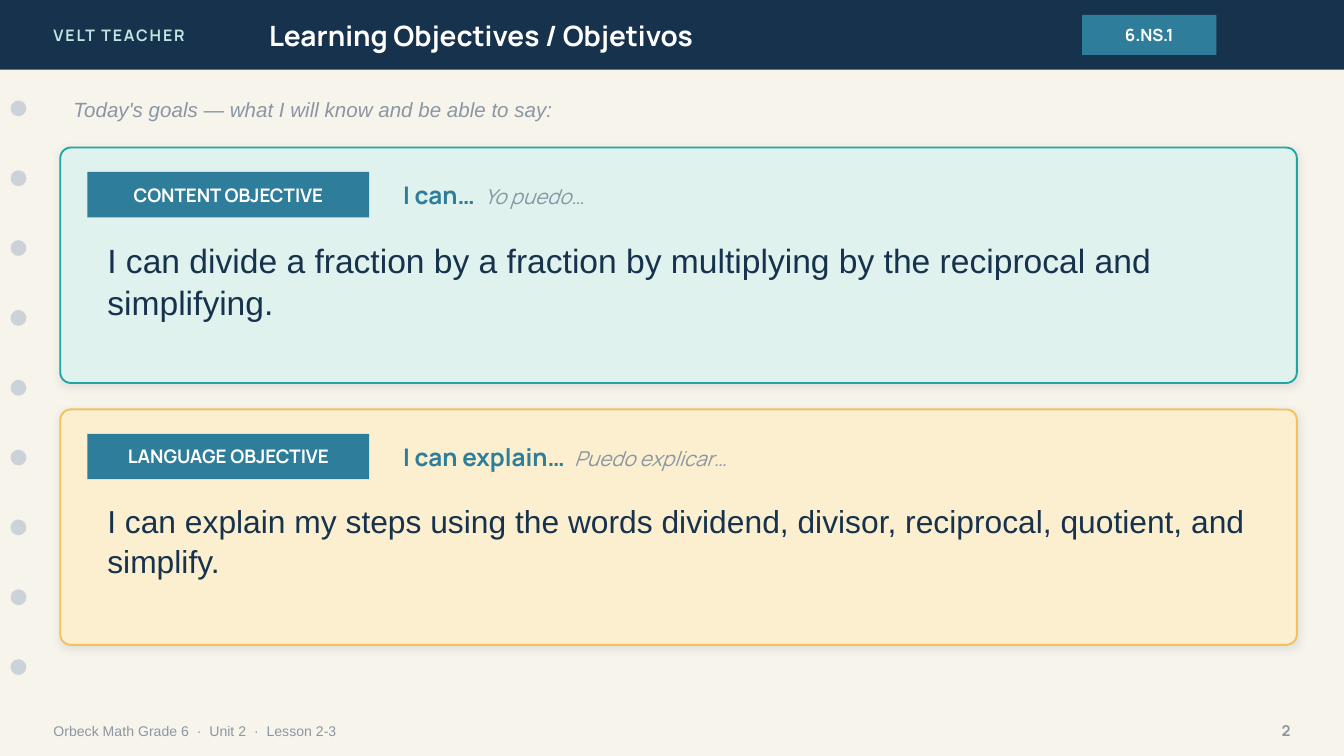
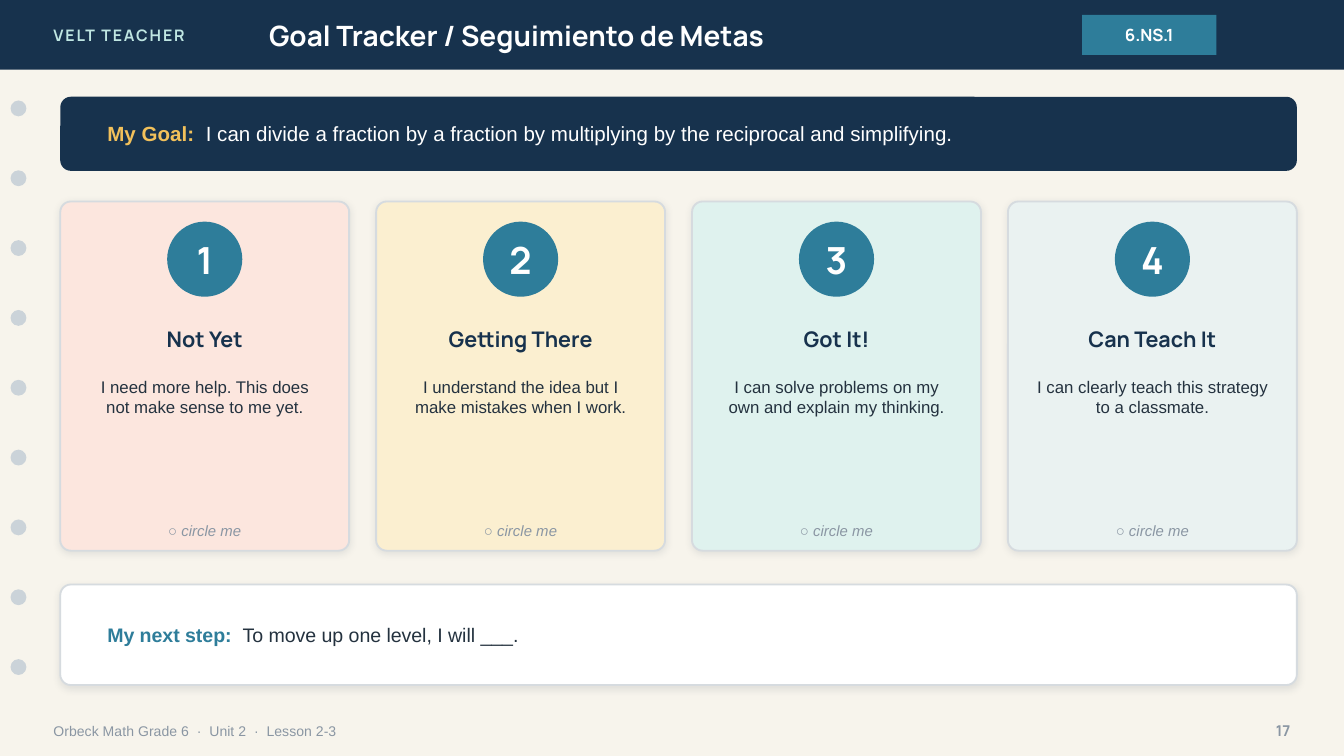
"""Build the learning objectives and goal tracker slides of a lesson deck."""
from lxml.etree import SubElement
from pptx import Presentation
from pptx.dml.color import RGBColor
from pptx.enum.shapes import MSO_SHAPE
from pptx.enum.text import MSO_ANCHOR, MSO_AUTO_SIZE, PP_ALIGN
from pptx.oxml.ns import qn
from pptx.util import Cm, Pt

NAVY, TEAL, GOLD, WHITE = "17324D", "2E7D9A", "F2C15B", "FFFFFF"
CREAM, MINT, BUTTER, BLUSH, MIST = "F7F4EC", "DFF2EE", "FBEFD0", "FCE6DE", "EAF2F1"
INK, GREY, DOT, BORDER = "24323F", "8A96A3", "CBD3D9", "D6DBDF"
HEADING, BODY = "Manrope", "Arial"
LEFT, CONTENT_WIDTH = 1.14, 23.37
TEXT_LEFT, TEXT_WIDTH = 1.78, 22.1
BAND_HEIGHT = 1.32
CORNER_RADIUS = 0.2


def add_box(slide, left, top, width, height, kind=None, fill=None, line=None):
    """Add a text box, or a filled shape; an outlined shape also gets a soft shadow."""
    place = Cm(left), Cm(top), Cm(width), Cm(height)
    if kind is None:
        return slide.shapes.add_textbox(*place)
    shape = slide.shapes.add_shape(kind, *place)
    shape.shadow.inherit = False
    shape.fill.solid()
    shape.fill.fore_color.rgb = RGBColor.from_string(fill)
    if kind == MSO_SHAPE.ROUNDED_RECTANGLE:
        shape.adjustments[0] = CORNER_RADIUS / min(width, height)
    if line is None:
        shape.line.fill.background()
        return shape
    shape.line.color.rgb = RGBColor.from_string(line)
    shape.line.width = Pt(1)
    effects = shape.element.spPr.find(qn("a:effectLst"))
    shadow = SubElement(effects, qn("a:outerShdw"), blurRad=str(Pt(4)), dist=str(Pt(1)),
                        dir="5400000", algn="bl", rotWithShape="0")
    color = SubElement(shadow, qn("a:srgbClr"), val="1C2E42")
    SubElement(color, qn("a:alpha"), val="10000")
    return shape


def write(shape, text, size, color, font=BODY, bold=False, italic=False, align=PP_ALIGN.LEFT,
          anchor=MSO_ANCHOR.MIDDLE, line_spacing=None, tracking=None):
    """Append a formatted run to the first paragraph of a shape."""
    frame = shape.text_frame
    frame.word_wrap = True
    frame.auto_size = MSO_AUTO_SIZE.NONE
    frame.vertical_anchor = anchor
    paragraph = frame.paragraphs[0]
    paragraph.alignment = align
    paragraph.line_spacing = line_spacing
    run = paragraph.add_run()
    run.text = text
    run.font.name = font
    run.font.size = Pt(size)
    run.font.bold = bold
    run.font.italic = italic
    run.font.color.rgb = RGBColor.from_string(color)
    if tracking:
        run.font._element.set("spc", str(tracking))


presentation = Presentation()
presentation.slide_width = Cm(25.4)
presentation.slide_height = Cm(14.29)

slides = []
for title_text, page in [("Learning Objectives / Objetivos", "2"),
                         ("Goal Tracker / Seguimiento de Metas", "17")]:
    slide = presentation.slides.add_slide(presentation.slide_layouts[5])
    slides.append(slide)
    slide.background.fill.solid()
    slide.background.fill.fore_color.rgb = RGBColor.from_string(CREAM)

    title = slide.shapes.title
    title.left, title.top, title.width, title.height = Cm(4.83), Cm(0), Cm(14.22), Cm(BAND_HEIGHT)
    write(title, title_text, 15, WHITE, font=HEADING, bold=True)
    band = add_box(slide, 0, 0, 25.4, BAND_HEIGHT, MSO_SHAPE.RECTANGLE, NAVY)
    title.element.addprevious(band.element)

    brand = add_box(slide, 0.76, 0, 6.1, BAND_HEIGHT)
    write(brand, "VELT TEACHER", 8.5, "BFE6E2", font=HEADING, bold=True, tracking=100)
    standard = add_box(slide, 20.45, 0.28, 2.54, 0.76, MSO_SHAPE.RECTANGLE, TEAL)
    write(standard, "6.NS.1", 9, WHITE, font=HEADING, bold=True, align=PP_ALIGN.CENTER)

    for index in range(9):
        add_box(slide, 0.2, 1.9 + index * BAND_HEIGHT, 0.3, 0.3, MSO_SHAPE.OVAL, DOT)

    footer = add_box(slide, 0.76, 13.46, 17.78, 0.71)
    write(footer, "Orbeck Math Grade 6  ·  Unit 2  ·  Lesson 2-3", 7.5, GREY)
    page_number = add_box(slide, 23.37, 13.46, 1.27, 0.71)
    write(page_number, page, 8, GREY, font=HEADING, bold=True, align=PP_ALIGN.RIGHT)

objectives_slide, tracker_slide = slides

intro = add_box(objectives_slide, LEFT, 1.68, CONTENT_WIDTH, 0.76)
write(intro, "Today's goals — what I will know and be able to say:", 11, GREY, italic=True)

objectives = [
    ("CONTENT OBJECTIVE", "I can…  ", "Yo puedo…", MINT, "1FA6A2", 18,
     "I can divide a fraction by a fraction by multiplying by the reciprocal and simplifying."),
    ("LANGUAGE OBJECTIVE", "I can explain…  ", "Puedo explicar…", BUTTER, GOLD, 17,
     "I can explain my steps using the words dividend, divisor, reciprocal, quotient, "
     "and simplify."),
]
for index, (label, stem, translation, fill, line, size, statement) in enumerate(objectives):
    top = 2.79 + index * 4.95
    add_box(objectives_slide, LEFT, top, CONTENT_WIDTH, 4.45,
            MSO_SHAPE.ROUNDED_RECTANGLE, fill, line)
    tag = add_box(objectives_slide, 1.65, top + 0.46, 5.33, 0.86, MSO_SHAPE.RECTANGLE, TEAL)
    write(tag, label, 10, WHITE, font=HEADING, bold=True, align=PP_ALIGN.CENTER)
    starter = add_box(objectives_slide, 7.37, top + 0.46, 16.76, 0.86)
    write(starter, stem, 13, TEAL, font=HEADING, bold=True)
    write(starter, translation, 11, GREY, font=HEADING, italic=True)
    objective = add_box(objectives_slide, TEXT_LEFT, top + 1.58, TEXT_WIDTH, 2.54)
    write(objective, statement, size, NAVY, anchor=MSO_ANCHOR.TOP, line_spacing=1.05)

add_box(tracker_slide, LEFT, 1.83, CONTENT_WIDTH, 1.4, MSO_SHAPE.ROUNDED_RECTANGLE, NAVY)
goal = add_box(tracker_slide, TEXT_LEFT, 1.83, TEXT_WIDTH, 1.4)
write(goal, "My Goal:  ", 11, GOLD, bold=True)
write(goal, objectives[0][-1], 11, WHITE)

levels = [
    ("Not Yet", "I need more help. This does not make sense to me yet.", BLUSH),
    ("Getting There", "I understand the idea but I make mistakes when I work.", BUTTER),
    ("Got It!", "I can solve problems on my own and explain my thinking.", MINT),
    ("Can Teach It", "I can clearly teach this strategy to a classmate.", MIST),
]
for index, (name, description, fill) in enumerate(levels):
    left = LEFT + index * 5.97
    add_box(tracker_slide, left, 3.81, 5.46, 6.6, MSO_SHAPE.ROUNDED_RECTANGLE, fill, BORDER)
    number = add_box(tracker_slide, left + 2.02, 4.19, 1.42, 1.42, MSO_SHAPE.OVAL, TEAL)
    number.text_frame.margin_top = number.text_frame.margin_bottom = 0
    write(number, str(index + 1), 20, WHITE, font=HEADING, bold=True, align=PP_ALIGN.CENTER)
    level = add_box(tracker_slide, left + 0.13, 5.97, 5.2, 0.89)
    write(level, name, 11.5, NAVY, font=HEADING, bold=True, align=PP_ALIGN.CENTER)
    meaning = add_box(tracker_slide, left + 0.3, 6.99, 4.86, 2.92)
    write(meaning, description, 9, INK, align=PP_ALIGN.CENTER, anchor=MSO_ANCHOR.TOP)
    prompt = add_box(tracker_slide, left + 0.13, 9.78, 5.2, 0.51)
    write(prompt, "○ circle me", 8, GREY, italic=True, align=PP_ALIGN.CENTER)

add_box(tracker_slide, LEFT, 11.05, CONTENT_WIDTH, 1.9,
        MSO_SHAPE.ROUNDED_RECTANGLE, WHITE, BORDER)
next_step = add_box(tracker_slide, TEXT_LEFT, 11.05, TEXT_WIDTH, 1.9)
write(next_step, "My next step:  ", 10.5, TEAL, bold=True)
write(next_step, "To move up one level, I will ___.", 10.5, INK)

presentation.save("out.pptx")
